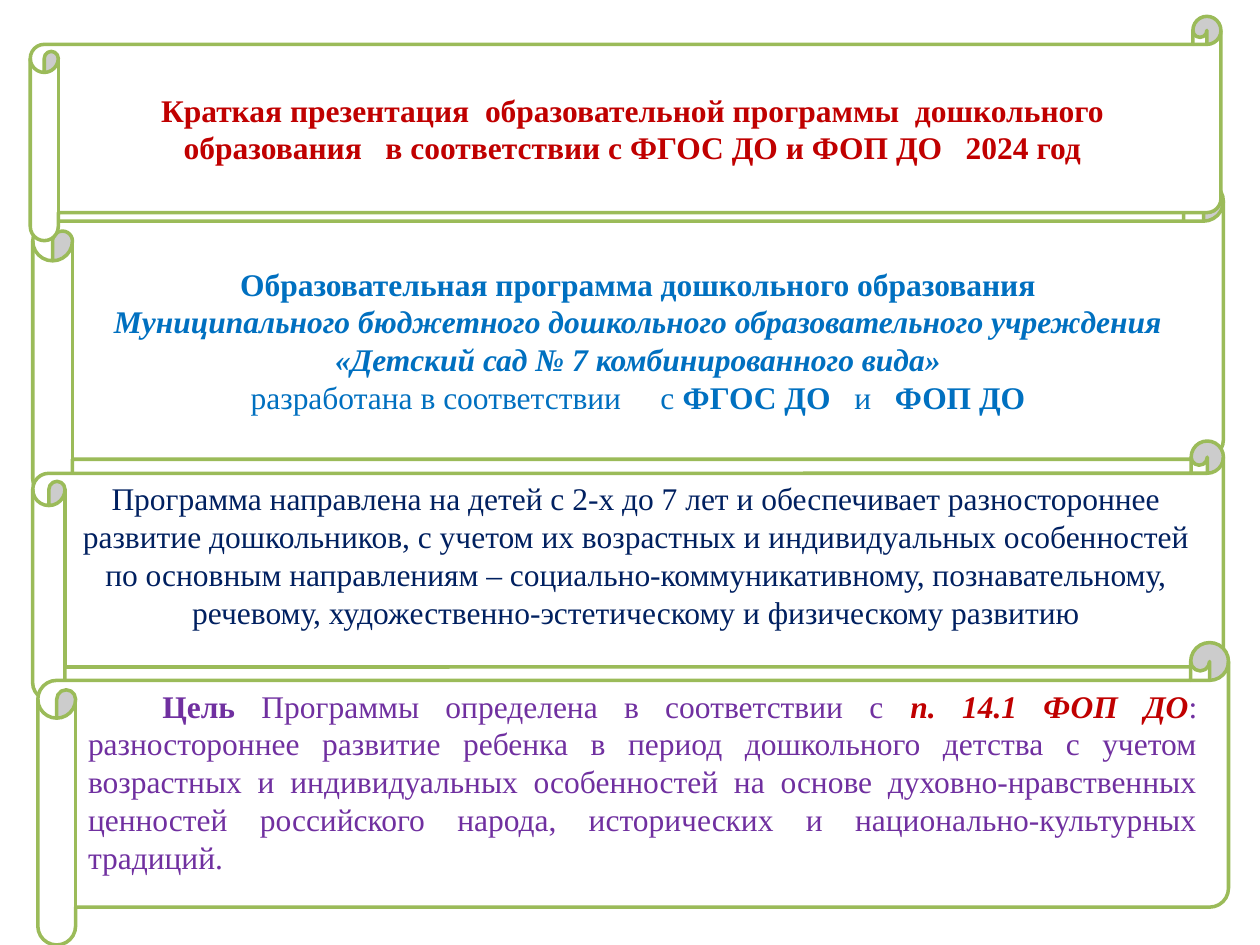
from pptx import Presentation
from pptx.dml.color import RGBColor
from pptx.enum.shapes import MSO_SHAPE
from pptx.enum.text import MSO_ANCHOR, PP_ALIGN
from pptx.util import Inches, Pt

COLORS = {
    "paper": "FFFFFF",
    "border": "9BBB59",
    "red": "C00000",
    "blue": "0070C0",
    "navy": "002060",
    "purple": "7030A0",
}


def add_text(paragraph, text, color, bold=False, italic=False):
    run = paragraph.add_run()
    run.text = text
    run.font.name = "Times New Roman"
    run.font.size = Pt(18)
    run.font.bold = bold
    run.font.italic = italic
    run.font.color.rgb = RGBColor.from_string(COLORS[color])


def add_scroll(slide, left, top, height, anchor):
    shape = slide.shapes.add_shape(
        MSO_SHAPE.HORIZONTAL_SCROLL, Inches(left), Inches(top), Inches(9.45), Inches(height)
    )
    shape.shadow.inherit = False
    shape.fill.solid()
    shape.fill.fore_color.rgb = RGBColor.from_string(COLORS["paper"])
    shape.line.color.rgb = RGBColor.from_string(COLORS["border"])
    shape.line.width = Pt(2)
    shape.text_frame.word_wrap = True
    shape.text_frame.vertical_anchor = anchor
    return shape.text_frame


presentation = Presentation()
presentation.slide_width = Inches(10)
presentation.slide_height = Inches(7.5)
slide = presentation.slides.add_slide(presentation.slide_layouts[6])

program_lines = [
    [("Образовательная программа дошкольного образования", True, False)],
    [("Муниципального бюджетного дошкольного образовательного учреждения", True, True)],
    [("«Детский сад № 7 комбинированного вида»", True, True)],
    [
        ("разработана в соответствии     с ", False, False),
        ("ФГОС ДО   ", True, False),
        ("и   ", False, False),
        ("ФОП ДО", True, False),
    ],
]
program_frame = add_scroll(slide, 0.26, 1.44, 2.52, MSO_ANCHOR.MIDDLE)
for index, line in enumerate(program_lines):
    paragraph = program_frame.add_paragraph() if index else program_frame.paragraphs[0]
    paragraph.alignment = PP_ALIGN.CENTER
    for text, bold, italic in line:
        add_text(paragraph, text, "blue", bold=bold, italic=italic)

audience = add_scroll(slide, 0.26, 3.5, 2.05, MSO_ANCHOR.TOP).paragraphs[0]
audience.alignment = PP_ALIGN.CENTER
add_text(
    audience,
    "Программа направлена на детей с 2-х до 7 лет и обеспечивает разностороннее развитие "
    "дошкольников, с учетом их возрастных и индивидуальных особенностей по основным "
    "направлениям – социально-коммуникативному, познавательному, речевому, "
    "художественно-эстетическому и физическому развитию",
    "navy",
)

goal = add_scroll(slide, 0.3, 5.1, 2.4, MSO_ANCHOR.TOP).paragraphs[0]
goal.alignment = PP_ALIGN.JUSTIFY
goal_properties = goal._p.get_or_add_pPr()
goal_properties.set("marL", "0")
goal_properties.set("indent", str(Inches(0.59)))
add_text(goal, "Цель", "purple", bold=True)
add_text(goal, " Программы определена в соответствии с ", "purple")
add_text(goal, "п. 14.1 ФОП ДО", "red", bold=True, italic=True)
add_text(
    goal,
    ": разностороннее развитие ребенка в период дошкольного детства с учетом возрастных и "
    "индивидуальных особенностей на основе духовно-нравственных ценностей российского "
    "народа, исторических и национально-культурных традиций.",
    "purple",
)

heading = add_scroll(slide, 0.24, 0.13, 1.78, MSO_ANCHOR.MIDDLE).paragraphs[0]
heading.alignment = PP_ALIGN.CENTER
add_text(
    heading,
    "Краткая презентация  образовательной программы  дошкольного образования   "
    "в соответствии с ФГОС ДО и ФОП ДО   2024 год",
    "red",
    bold=True,
)

presentation.save("out.pptx")
